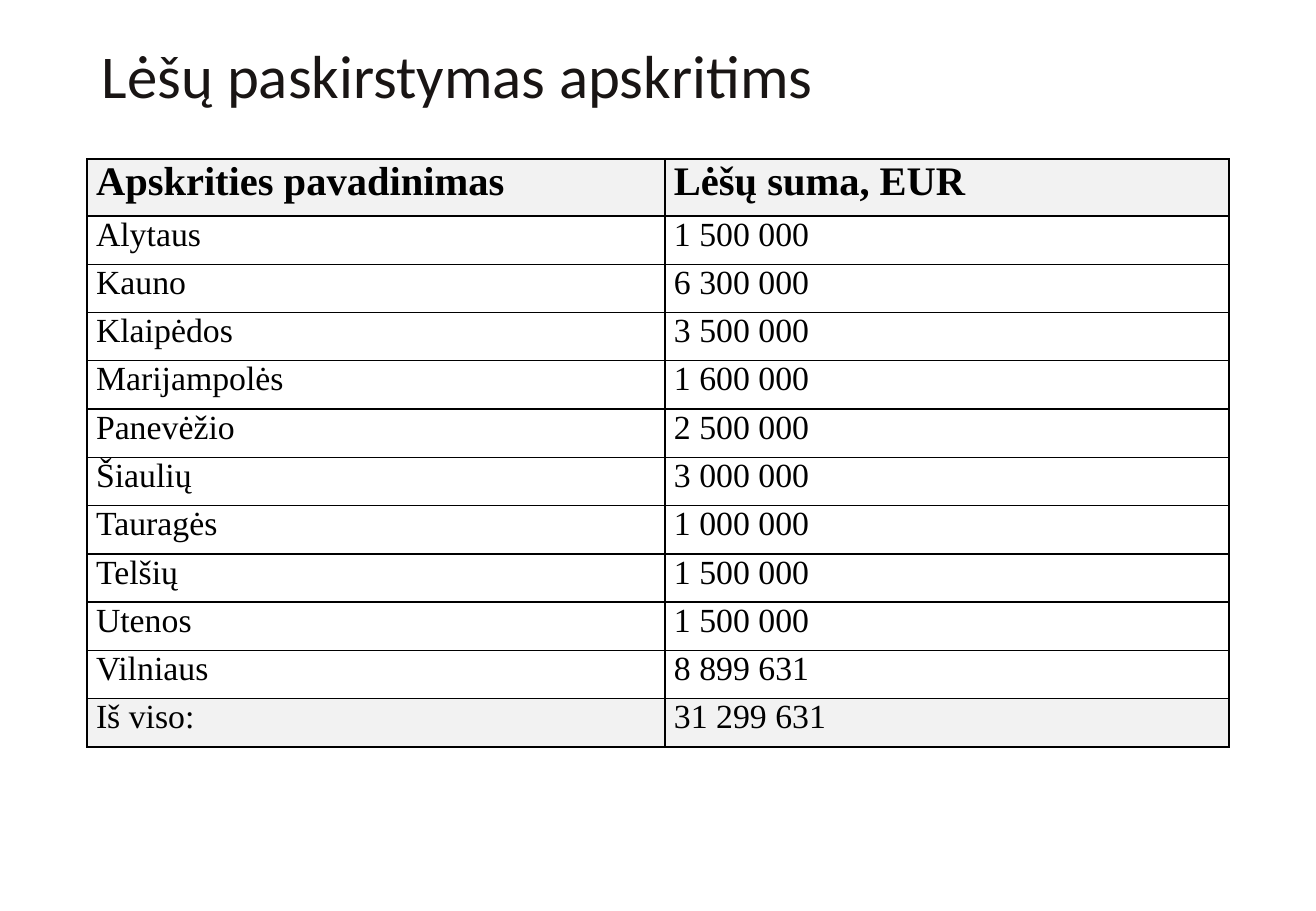
from lxml.etree import SubElement
from pptx import Presentation
from pptx.dml.color import RGBColor
from pptx.enum.text import MSO_ANCHOR, PP_ALIGN
from pptx.oxml.ns import qn
from pptx.util import Pt

PX = 7526  # EMU per px
TITLE_INK = RGBColor(0x19, 0x15, 0x14)
BLACK = RGBColor(0x00, 0x00, 0x00)
SHADE = RGBColor(0xF2, 0xF2, 0xF2)

COUNTIES = [
    ("Apskrities pavadinimas", "Lėšų suma, EUR"),
    ("Alytaus", "1 500 000"),
    ("Kauno", "6 300 000"),
    ("Klaipėdos", "3 500 000"),
    ("Marijampolės", "1 600 000"),
    ("Panevėžio", "2 500 000"),
    ("Šiaulių", "3 000 000"),
    ("Tauragės", "1 000 000"),
    ("Telšių", "1 500 000"),
    ("Utenos", "1 500 000"),
    ("Vilniaus", "8 899 631"),
    ("Iš viso:", "31 299 631"),
]


def write(frame, text, font, size, color, bold=False, align=PP_ALIGN.LEFT, spacing=1.0):
    para = frame.paragraphs[0]
    para.alignment = align
    para.line_spacing = spacing
    span = para.add_run()
    span.text = text
    span.font.name = font
    span.font.size = Pt(size)
    span.font.bold = bold
    span.font.color.rgb = color


def add_borders(cell):
    properties = cell._tc.get_or_add_tcPr()
    for side in ("a:lnL", "a:lnR", "a:lnT", "a:lnB"):
        line = SubElement(properties, qn(side), w=str(Pt(1)))
        fill = SubElement(line, qn("a:solidFill"))
        SubElement(fill, qn("a:srgbClr"), val=str(BLACK))


deck = Presentation()
deck.slide_width = 1316 * PX
deck.slide_height = 911 * PX
page = deck.slides.add_slide(deck.slide_layouts[6])

# Title
box = page.shapes.add_textbox(90 * PX, 43 * PX, 1135 * PX, 72 * PX)
box.text_frame.word_wrap = True
box.text_frame.vertical_anchor = MSO_ANCHOR.MIDDLE
write(box.text_frame, "Lėšų paskirstymas apskritims", "Calibri", 36, TITLE_INK, spacing=0.9)

# Table grid: a taller header over equal rows
table_height, header_height = 588 * PX, 57 * PX
last = len(COUNTIES) - 1
table = page.shapes.add_table(
    len(COUNTIES), 2, 87 * PX, 159 * PX, 1142 * PX, table_height
).table
table.horz_banding = False
table.columns[0].width = 578 * PX
table.columns[1].width = 564 * PX

# Table cells
for index, county in enumerate(COUNTIES):
    header = index == 0
    table.rows[index].height = header_height if header else (table_height - header_height) // last
    for column, text in enumerate(county):
        cell = table.cell(index, column)
        cell.margin_left = cell.margin_right = 9 * PX
        cell.margin_top = cell.margin_bottom = 0
        add_borders(cell)
        if index in (0, last):
            cell.fill.solid()
            cell.fill.fore_color.rgb = SHADE
        else:
            cell.fill.background()
        write(cell.text_frame, text, "Times New Roman", 24 if header else 20, BLACK,
              bold=header, align=PP_ALIGN.JUSTIFY)

deck.save("out.pptx")
